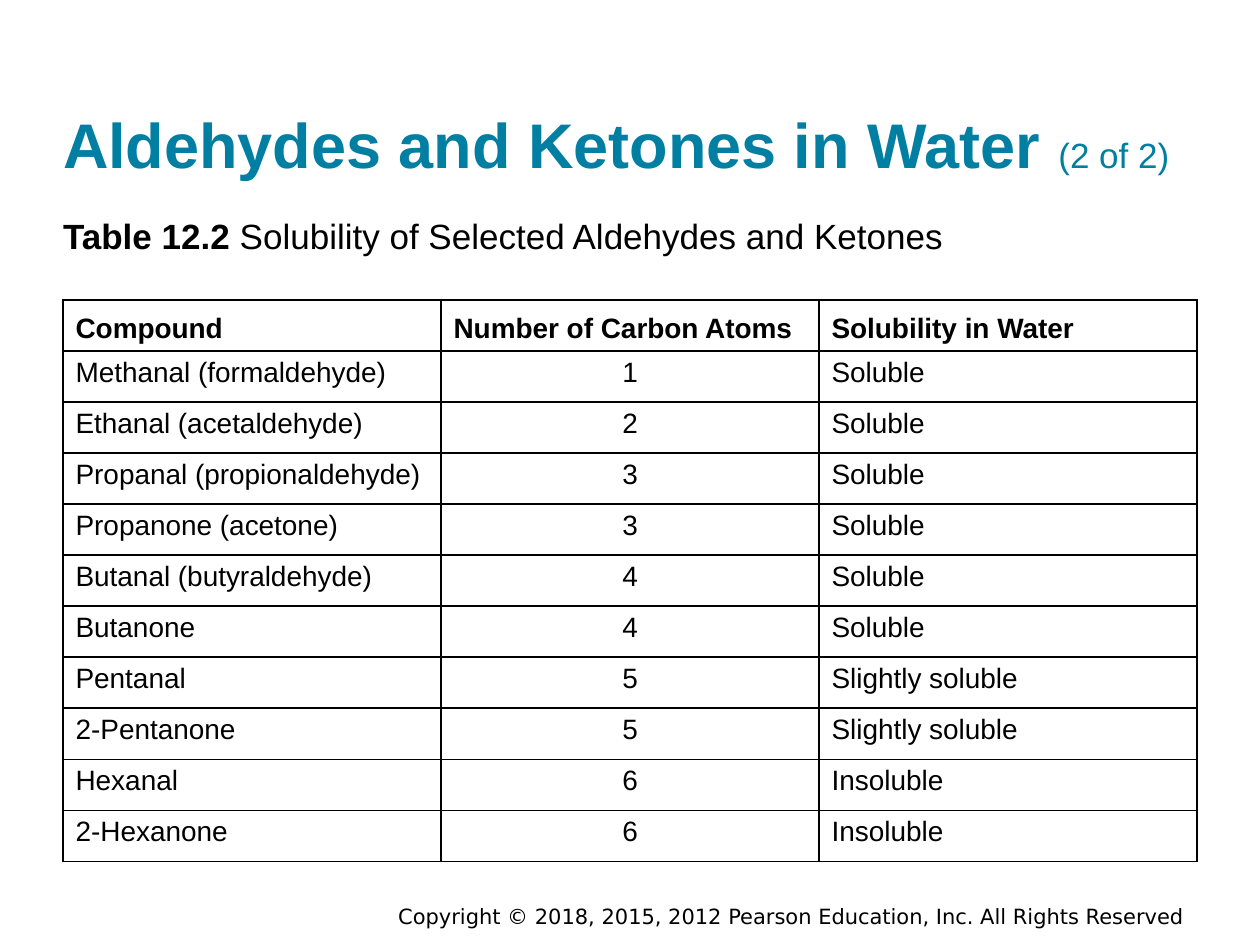
"""Build the slide on the solubility of aldehydes and ketones in water."""
from dataclasses import dataclass

from lxml.etree import SubElement
from pptx import Presentation
from pptx.dml.color import RGBColor
from pptx.enum.text import MSO_ANCHOR as Anchor, MSO_AUTO_SIZE as AutoSize, PP_ALIGN as Align
from pptx.oxml.ns import qn
from pptx.util import Inches, Pt


@dataclass(frozen=True)
class Theme:
    font: str = "Arial"
    footer_font: str = "DejaVu Sans"
    ink: str = "000000"
    accent: str = "007FA3"
    title_size: int = 36
    lead_size: int = 20
    cell_size: int = 16
    footer_size: int = 12
    rule: float = 1


THEME = Theme()
MARGIN, CONTENT_WIDTH = 0.5, 9
HEADINGS = ("Compound", "Number of Carbon Atoms", "Solubility in Water")
COMPOUNDS = (
    ("Methanal (formaldehyde)", 1, "Soluble"),
    ("Ethanal (acetaldehyde)", 2, "Soluble"),
    ("Propanal (propionaldehyde)", 3, "Soluble"),
    ("Propanone (acetone)", 3, "Soluble"),
    ("Butanal (butyraldehyde)", 4, "Soluble"),
    ("Butanone", 4, "Soluble"),
    ("Pentanal", 5, "Slightly soluble"),
    ("2-Pentanone", 5, "Slightly soluble"),
    ("Hexanal", 6, "Insoluble"),
    ("2-Hexanone", 6, "Insoluble"),
)


def add_text(paragraph, text, *, size, bold=False, color=THEME.ink,
             font=THEME.font, align=Align.LEFT):
    paragraph.alignment = align
    run = paragraph.add_run()
    run.text = text
    run.font.name, run.font.size, run.font.bold = font, Pt(size), bold
    run.font.color.rgb = RGBColor.from_string(color)


def place_placeholder(placeholder, top, width, height, anchor):
    placeholder.left, placeholder.top = Inches(MARGIN), Inches(top)
    placeholder.width, placeholder.height = Inches(width), Inches(height)
    frame = placeholder.text_frame
    frame.margin_left = frame.margin_top = frame.margin_right = frame.margin_bottom = 0
    frame.word_wrap, frame.auto_size = True, AutoSize.NONE
    frame.vertical_anchor = anchor
    return frame.paragraphs[0]


def add_title(slide):
    heading = place_placeholder(slide.shapes.title, 0.24, CONTENT_WIDTH, 1.2, Anchor.BOTTOM)
    add_text(heading, "Aldehydes and Ketones in Water ",
             size=THEME.title_size, bold=True, color=THEME.accent)
    add_text(heading, "(2 of 2)", size=THEME.lead_size, color=THEME.accent)


def add_caption(slide):
    caption = place_placeholder(slide.placeholders[1], 1.7, 7.36, 0.41, Anchor.TOP)
    caption.space_before = Pt(0)
    properties = caption._p.get_or_add_pPr()
    properties.set("marL", "0")
    properties.set("indent", "0")
    SubElement(properties, qn("a:buNone"))
    add_text(caption, "Table 12.2", size=THEME.lead_size, bold=True)
    add_text(caption, " Solubility of Selected Aldehydes and Ketones", size=THEME.lead_size)


def outline_cell(cell):
    properties = cell._tc.get_or_add_tcPr()
    for side in ("lnL", "lnR", "lnT", "lnB"):
        line = SubElement(properties, qn(f"a:{side}"), w=str(Pt(THEME.rule)))
        fill = SubElement(line, qn("a:solidFill"))
        SubElement(fill, qn("a:srgbClr"), val=THEME.ink)


def add_solubility_table(slide):
    rows = (HEADINGS, *COMPOUNDS)
    table = slide.shapes.add_table(
        len(rows), len(HEADINGS), Inches(MARGIN), Inches(2.38),
        Inches(CONTENT_WIDTH), Inches(4.46)).table
    table.horz_banding = False
    for row_index, row in enumerate(rows):
        is_header = row_index == 0
        for column_index, value in enumerate(row):
            cell = table.cell(row_index, column_index)
            outline_cell(cell)
            cell.fill.background()
            cell.vertical_anchor = Anchor.BOTTOM if is_header else Anchor.TOP
            add_text(cell.text_frame.paragraphs[0], str(value),
                     size=THEME.cell_size, bold=is_header,
                     align=Align.CENTER if isinstance(value, int) else Align.LEFT)


def add_copyright(slide):
    frame = slide.shapes.add_textbox(
        Inches(2.9), Inches(7.04), Inches(6.6), Inches(0.46)).text_frame
    frame.word_wrap, frame.vertical_anchor = True, Anchor.MIDDLE
    add_text(frame.paragraphs[0],
             "Copyright © 2018, 2015, 2012 Pearson Education, Inc. All Rights Reserved",
             size=THEME.footer_size, font=THEME.footer_font, align=Align.RIGHT)


def main():
    deck = Presentation()
    deck.slide_width, deck.slide_height = Inches(10), Inches(7.5)
    slide = deck.slides.add_slide(deck.slide_layouts[1])
    add_title(slide)
    add_caption(slide)
    add_solubility_table(slide)
    add_copyright(slide)
    deck.save("out.pptx")


if __name__ == "__main__":
    main()
